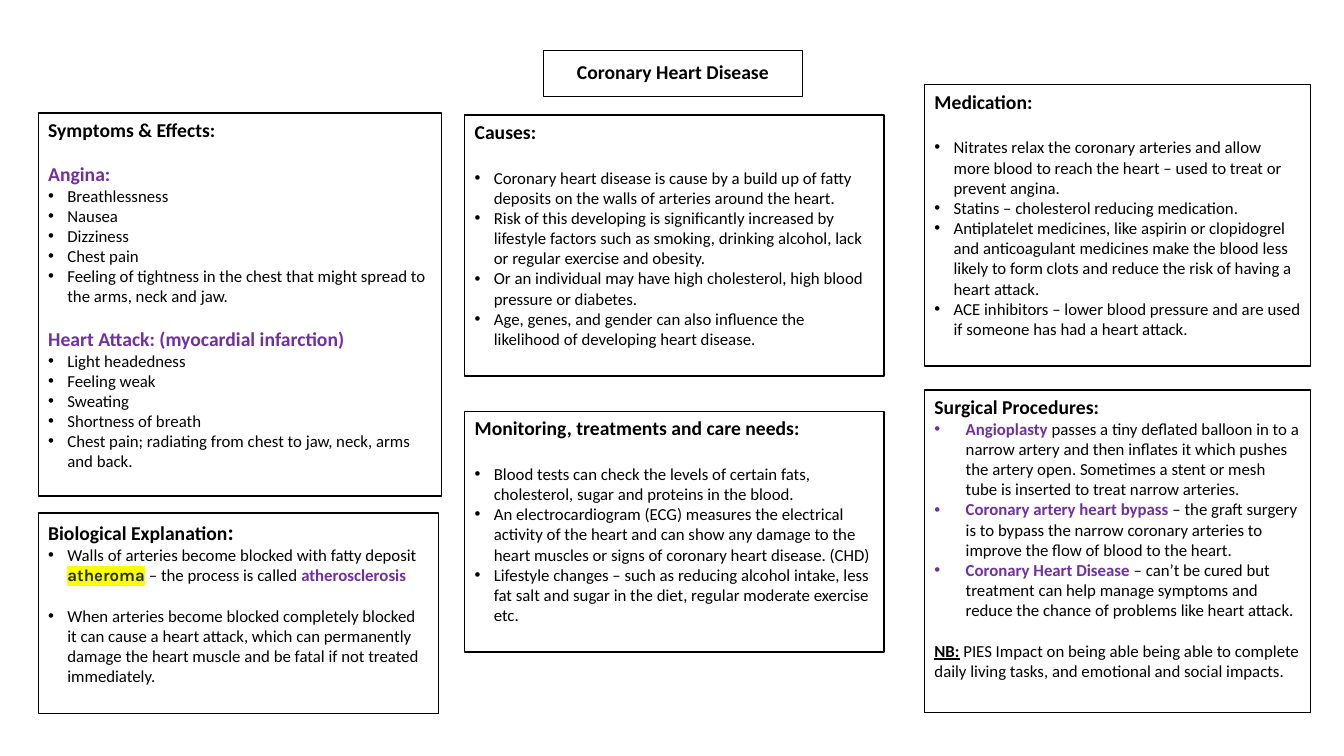
from pptx import Presentation
from pptx.dml.color import RGBColor
from pptx.enum.shapes import MSO_SHAPE as Shape
from pptx.enum.text import MSO_ANCHOR as Anchor, PP_ALIGN as Align
from pptx.oxml.ns import qn
from pptx.util import Inches, Pt
from lxml.etree import SubElement

BLACK = RGBColor(0x00, 0x00, 0x00)
WHITE = RGBColor(0xFF, 0xFF, 0xFF)
PURPLE = RGBColor(0x70, 0x30, 0xA0)
SLATE = RGBColor(0x21, 0x2B, 0x32)
YELLOW = RGBColor(0xFF, 0xFF, 0x00)

BODY = {"name": "Calibri", "size": Pt(12), "bold": False, "color": BLACK}
HEADING = BODY | {"size": Pt(14), "bold": True}
SUBHEADING = HEADING | {"color": PURPLE}
TERM = BODY | {"bold": True, "color": PURPLE}
MARKED = TERM | {"name": "Karla", "color": SLATE, "highlight": YELLOW}
NOTE = BODY | {"bold": True, "underline": True}

SMALL_GAP, LARGE_GAP = 14.6, 17.1
NARROW, WIDE = 0.19, 0.31


def add_run(paragraph, text, style):
    run = paragraph.add_run()
    run.text = text
    for attribute, value in style.items():
        if attribute == "color":
            run.font.color.rgb = value
        elif attribute == "highlight":
            highlight = SubElement(run.font._element, qn("a:highlight"))
            SubElement(highlight, qn("a:srgbClr")).set("val", str(value))
            run.font._element.find(qn("a:solidFill")).addnext(highlight)
        else:
            setattr(run.font, attribute, value)


def set_bullet(paragraph, indent):
    properties = paragraph._p.get_or_add_pPr()
    properties.set("marL", str(Inches(indent)))
    properties.set("indent", str(-Inches(indent)))
    SubElement(properties, qn("a:buFont")).set("typeface", "Arial")
    SubElement(properties, qn("a:buChar")).set("char", "•")


def line(*runs, gap=0, indent=0):
    """Describe a paragraph: its runs, the space before it and its bullet indent."""
    return runs, gap, indent


def bullets(*texts, gap=0):
    return [line((text, BODY), gap=0 if i else gap, indent=NARROW)
            for i, text in enumerate(texts)]


def add_panel(slide, box, lines):
    """Draw an outlined box and fill it with paragraphs."""
    panel = slide.shapes.add_shape(Shape.RECTANGLE, *map(Inches, box))
    panel.shadow.inherit = False
    panel.fill.solid()
    panel.fill.fore_color.rgb = WHITE
    panel.line.color.rgb = BLACK
    panel.line.width = Pt(1)
    frame = panel.text_frame
    frame.word_wrap = True
    frame.vertical_anchor = Anchor.TOP
    for i, (runs, gap, indent) in enumerate(lines):
        paragraph = frame.add_paragraph() if i else frame.paragraphs[0]
        paragraph.alignment = Align.LEFT
        if indent:
            set_bullet(paragraph, indent)
        if gap:
            paragraph.space_before = Pt(gap)
        for text, style in runs:
            add_run(paragraph, text, style)
    return frame


def add_title(slide, box):
    frame = add_panel(slide, box, [line(("Coronary Heart Disease", HEADING))])
    frame.vertical_anchor = Anchor.MIDDLE
    frame.paragraphs[0].alignment = Align.CENTER
    frame.paragraphs[0].line_spacing = 0.9


SYMPTOMS = [
    line(("Symptoms & Effects:", HEADING)),
    line(("Angina:", SUBHEADING), gap=SMALL_GAP),
    *bullets(
        "Breathlessness", "Nausea", "Dizziness", "Chest pain",
        "Feeling of tightness in the chest that might spread to the arms, neck and jaw."),
    line(("Heart Attack: (myocardial infarction)", SUBHEADING), gap=SMALL_GAP),
    *bullets(
        "Light headedness", "Feeling weak", "Sweating", "Shortness of breath",
        "Chest pain; radiating from chest to jaw, neck, arms and back."),
]
BIOLOGY = [
    line(("Biological Explanation", HEADING), (":", HEADING | {"size": Pt(16)})),
    line(("Walls of arteries become blocked with fatty deposit ", BODY),
         ("atheroma", MARKED),
         (" – the process is called ", BODY),
         ("atherosclerosis", TERM), indent=NARROW),
    *bullets(
        "When arteries become blocked completely blocked it can cause a heart attack, "
        "which can permanently damage the heart muscle and be fatal if not treated "
        "immediately.", gap=SMALL_GAP),
]
CAUSES = [
    line(("Causes:", HEADING)),
    *bullets(
        "Coronary heart disease is cause by a build up of fatty deposits on the walls "
        "of arteries around the heart.",
        "Risk of this developing is significantly increased by lifestyle factors such "
        "as smoking, drinking alcohol, lack or regular exercise and obesity.",
        "Or an individual may have high cholesterol, high blood pressure or diabetes.",
        "Age, genes, and gender can also influence the likelihood of developing heart "
        "disease.", gap=LARGE_GAP),
]
MONITORING = [
    line(("Monitoring, treatments and care needs:", HEADING)),
    *bullets(
        "Blood tests can check the levels of certain fats, cholesterol, sugar and "
        "proteins in the blood.",
        "An electrocardiogram (ECG) measures the electrical activity of the heart and "
        "can show any damage to the heart muscles or signs of coronary heart disease. "
        "(CHD)",
        "Lifestyle changes – such as reducing alcohol intake, less fat salt and sugar "
        "in the diet, regular moderate exercise etc.", gap=LARGE_GAP),
]
MEDICATION = [
    line(("Medication:", HEADING)),
    *bullets(
        "Nitrates relax the coronary arteries and allow more blood to reach the heart "
        "– used to treat or prevent angina.",
        "Statins – cholesterol reducing medication.",
        "Antiplatelet medicines, like aspirin or clopidogrel and anticoagulant "
        "medicines make the blood less likely to form clots and reduce the risk of "
        "having a heart attack.",
        "ACE inhibitors – lower blood pressure and are used if someone has had a heart "
        "attack.", gap=LARGE_GAP),
]
PROCEDURES = {
    "Angioplasty ":
        "passes a tiny deflated balloon in to a narrow artery and then inflates it "
        "which pushes the artery open. Sometimes a stent or mesh tube is inserted to "
        "treat narrow arteries.",
    "Coronary artery heart bypass ":
        "– the graft surgery is to bypass the narrow coronary arteries to improve the "
        "flow of blood to the heart.",
    "Coronary Heart Disease ":
        "– can’t be cured but treatment can help manage symptoms and reduce the chance "
        "of problems like heart attack.",
}
SURGERY = [
    line(("Surgical Procedures:", HEADING)),
    *[line((term, TERM), (text, BODY), indent=WIDE) for term, text in PROCEDURES.items()],
    line(("NB:", NOTE),
         (" PIES Impact on being able being able to complete daily living tasks, and "
          "emotional and social impacts.", BODY), gap=SMALL_GAP),
]

LEFT, MIDDLE, RIGHT = 0.38, 4.61, 9.17
PANELS = [
    ((LEFT, 1.12, 4, 3.8), SYMPTOMS),
    ((LEFT, 5.09, 3.97, 1.99), BIOLOGY),
    ((MIDDLE, 1.14, 4.16, 2.59), CAUSES),
    ((MIDDLE, 4.08, 4.16, 2.39), MONITORING),
    ((RIGHT, 0.84, 3.83, 2.79), MEDICATION),
    ((RIGHT, 3.87, 3.83, 3.2), SURGERY),
]


def main():
    deck = Presentation()
    deck.slide_width, deck.slide_height = Inches(13.33), Inches(7.5)
    slide = deck.slides.add_slide(deck.slide_layouts[6])
    add_title(slide, (5.39, 0.5, 2.57, 0.46))
    for box, lines in PANELS:
        add_panel(slide, box, lines)
    deck.save("out.pptx")


if __name__ == "__main__":
    main()
